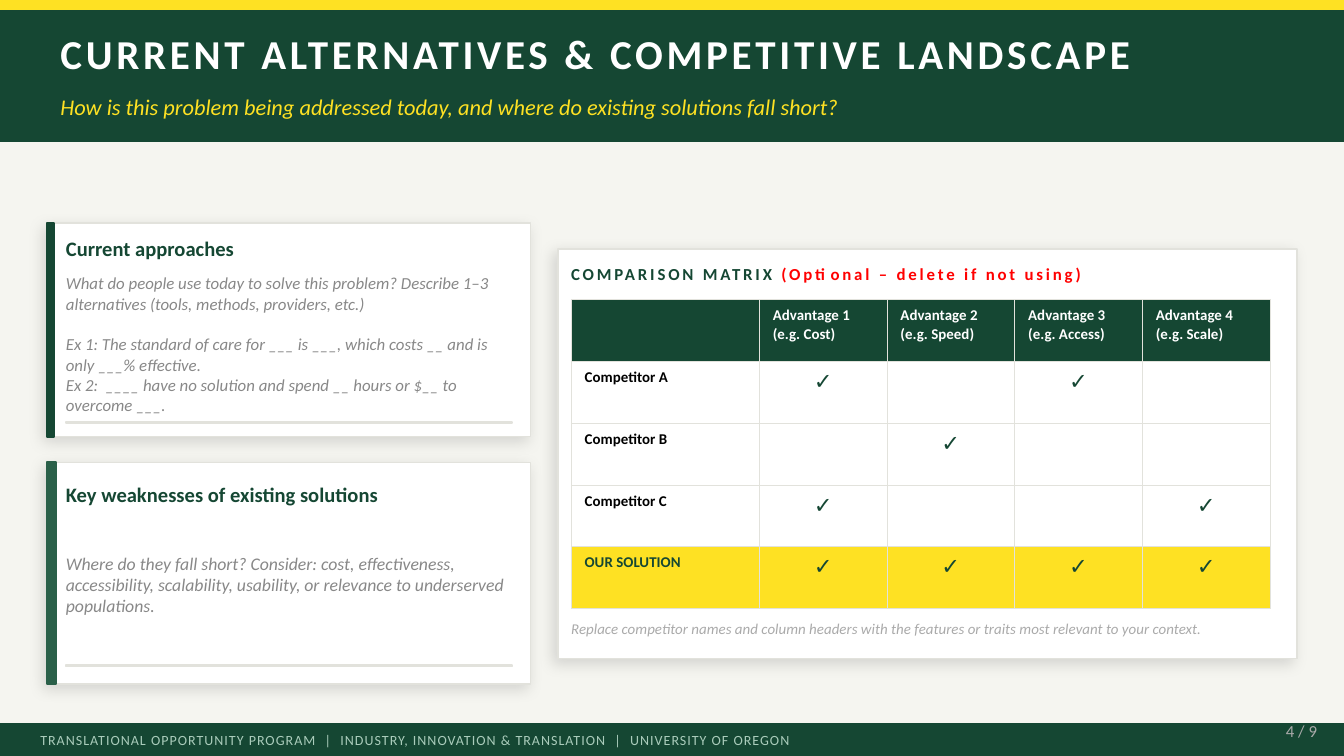
from lxml import etree
from pptx import Presentation
from pptx.dml.color import RGBColor
from pptx.enum.shapes import MSO_SHAPE
from pptx.enum.text import MSO_ANCHOR, MSO_AUTO_SIZE, PP_ALIGN
from pptx.oxml.ns import qn
from pptx.util import Inches, Pt

RECT = MSO_SHAPE.RECTANGLE
MIDDLE = MSO_ANCHOR.MIDDLE
NO_FIT = MSO_AUTO_SIZE.NONE
LEFT, CENTER, RIGHT = PP_ALIGN.LEFT, PP_ALIGN.CENTER, PP_ALIGN.RIGHT

W = 10
H = W * 9 / 16
FONT = "Calibri"
C = {
    "green": "154733", "moss": "2A6049", "yellow": "FEE123", "white": "FFFFFF",
    "paper": "F5F5F0", "rule": "E2E2DC", "mint": "AACCBB", "gray": "888888",
    "silver": "AAAAAA", "red": "FF0000", "black": "000000",
}

TITLE = "CURRENT ALTERNATIVES & COMPETITIVE LANDSCAPE"
SUBTITLE = "How is this problem being addressed today, and where do existing solutions fall short?"
FOOTER = "TRANSLATIONAL OPPORTUNITY PROGRAM  |  INDUSTRY, INNOVATION & TRANSLATION  |  UNIVERSITY OF OREGON"
PAGE = "4 / 9"
CARDS = [
    {"head": "Current approaches", "top": 1.66, "height": 1.59, "bar": 0.05, "accent": "green",
     "head_top": 1.71, "body_top": 2.03, "body_height": 1.06, "size": 9, "rule_top": 3.14,
     "body": ["What do people use today to solve this problem? Describe 1–3 alternatives (tools, methods, providers, etc.)",
              "Ex 1: The standard of care for ___ is ___, which costs __ and is only ___% effective.",
              "Ex 2:  ____ have no solution and spend __ hours or $__ to overcome ___."]},
    {"head": "Key weaknesses of existing solutions", "top": 3.44, "height": 1.65, "bar": 0.07, "accent": "moss",
     "head_top": 3.54, "body_top": 3.8, "body_height": 1.1, "size": 9.5, "rule_top": 4.95,
     "body": ["Where do they fall short? Consider: cost, effectiveness, accessibility, scalability, usability, or relevance to underserved populations."]},
]
MATRIX_HEAD = "COMPARISON MATRIX "
MATRIX_FLAG = "(Optional – delete if not using)"
MATRIX_NOTE = "Replace competitor names and column headers with the features or traits most relevant to your context."
TRAITS = ["Cost", "Speed", "Access", "Scale"]
RIVALS = [("Competitor A", {1, 3}), ("Competitor B", {2}), ("Competitor C", {1, 4}),
          ("OUR SOLUTION", {1, 2, 3, 4})]
COLS = [1.4] + [0.95] * len(TRAITS)
ROW = 0.46

CARD_X, CARD_W = 0.35, 3.6
TEXT_X, TEXT_W = 0.49, 3.35
MATRIX_X, MATRIX_W = 4.25, sum(COLS)


def rgb(name):
    return RGBColor.from_string(C[name])


def box(x, y, w, h, fill, line=None, width=1, shadow=False):
    sp = slide.shapes.add_shape(RECT, Inches(x), Inches(y), Inches(w), Inches(h))
    sp.shadow.inherit = False
    sp.fill.solid()
    sp.fill.fore_color.rgb = rgb(fill)
    sp.line.color.rgb = rgb(line or fill)
    sp.line.width = Pt(width)
    if shadow:
        effects = sp.element.spPr.find(qn("a:effectLst"))
        outer = etree.SubElement(effects, qn("a:outerShdw"), blurRad=str(Pt(8)), dist=str(Pt(3)),
                                 dir=str(135 * 60000), algn="bl", rotWithShape="0")
        color = etree.SubElement(outer, qn("a:srgbClr"), val=C["black"])
        etree.SubElement(color, qn("a:alpha"), val="12000")


def add_run(p, text, size, color="green", bold=False, italic=False, spacing=0):
    r = p.add_run()
    r.text = text
    r.font.name = FONT
    r.font.size = Pt(size)
    r.font.bold = bold
    r.font.italic = italic
    r.font.color.rgb = rgb(color)
    if spacing:
        r.font._element.set("spc", str(int(spacing * 100)))


def write(tf, lines, align=LEFT, **fmt):
    for i, line in enumerate(lines):
        p = tf.add_paragraph() if i else tf.paragraphs[0]
        p.alignment = align
        add_run(p, line, **fmt)


def label(x, y, w, h, *lines, sp=None, **fmt):
    at = Inches(x), Inches(y), Inches(w), Inches(h)
    if sp is None:
        sp = slide.shapes.add_textbox(*at)
    else:
        sp.left, sp.top, sp.width, sp.height = at
    tf = sp.text_frame
    tf.word_wrap = True
    tf.auto_size = NO_FIT
    tf.vertical_anchor = MIDDLE
    tf.margin_left = tf.margin_right = tf.margin_top = tf.margin_bottom = 0
    write(tf, lines, **fmt)
    return tf


def border(cell):
    tcPr = cell._tc.get_or_add_tcPr()
    for i, side in enumerate(("a:lnL", "a:lnR", "a:lnT", "a:lnB")):
        ln = etree.Element(qn(side), w=str(Pt(0.5)))
        fill = etree.SubElement(ln, qn("a:solidFill"))
        etree.SubElement(fill, qn("a:srgbClr"), val=C["rule"])
        tcPr.insert(i, ln)


def add_card(card):
    box(CARD_X, card["top"], CARD_W, card["height"], "white", "rule", 0.75, shadow=True)
    box(CARD_X, card["top"], card["bar"], card["height"], card["accent"])
    label(TEXT_X, card["head_top"], TEXT_W, 0.28, card["head"], size=11, bold=True)
    tf = label(TEXT_X, card["body_top"], TEXT_W, card["body_height"], *card["body"],
               size=card["size"], color="gray", italic=True)
    for p in tf.paragraphs[1:2]:
        p.space_before = Pt(11)
    box(TEXT_X, card["rule_top"], 3.32, 0.01, "rule")


def add_matrix():
    n = len(RIVALS) + 1
    frame = slide.shapes.add_table(n, len(COLS), Inches(MATRIX_X), Inches(2.23),
                                   Inches(MATRIX_W), Inches(ROW * n))
    table = frame.table
    for col, width in zip(table.columns, COLS):
        col.width = Inches(width)
    for r, row in enumerate(table.rows):
        row.height = Inches(ROW)
        ours = r == n - 1
        fill = "green" if r == 0 else "yellow" if ours else None
        for c, cell in enumerate(row.cells):
            if fill:
                cell.fill.solid()
                cell.fill.fore_color.rgb = rgb(fill)
            else:
                cell.fill.background()
            border(cell)
            tf = cell.text_frame
            if r == 0:
                if c:
                    write(tf, [f"Advantage {c}", f"(e.g. {TRAITS[c - 1]})"], size=8, color="white", bold=True)
                continue
            name, marks = RIVALS[r - 1]
            if c == 0:
                write(tf, [name], size=8, color="green" if ours else "black", bold=True)
            elif c in marks:
                write(tf, ["✓"], align=CENTER, size=12)


prs = Presentation()
prs.slide_width, prs.slide_height = Inches(W), Inches(H)
slide = prs.slides.add_slide(prs.slide_layouts[5])
slide.background.fill.solid()
slide.background.fill.fore_color.rgb = rgb("paper")

box(0, 0, W, 1.05, "green")
box(0, 0, W, 0.07, "yellow")
title = slide.shapes.title
title.element.getparent().append(title.element)
label(0.45, 0.12, 8.5, 0.55, TITLE, sp=title, size=22, color="white", bold=True, spacing=2)
label(0.45, 0.62, 8.5, 0.35, SUBTITLE, size=12, color="yellow", italic=True)

box(0, H - 0.24, W, 0.24, "green")
label(0.3, H - 0.24, 9, 0.24, FOOTER, size=7.5, color="mint", spacing=0.5)
label(8.9, 5.33, 0.9, 0.22, PAGE, align=RIGHT, size=9, color="silver")

for card in CARDS:
    add_card(card)

box(4.15, 1.85, 5.5, 3.05, "white", "rule", shadow=True)
tf = label(MATRIX_X, 1.9, MATRIX_W, 0.28, MATRIX_HEAD, size=9, bold=True, spacing=1.5)
add_run(tf.paragraphs[0], MATRIX_FLAG, size=9, color="red", bold=True, spacing=1.5)
add_matrix()
label(MATRIX_X, 4.58, MATRIX_W, 0.2, MATRIX_NOTE, size=8, color="silver", italic=True)

prs.save("out.pptx")
